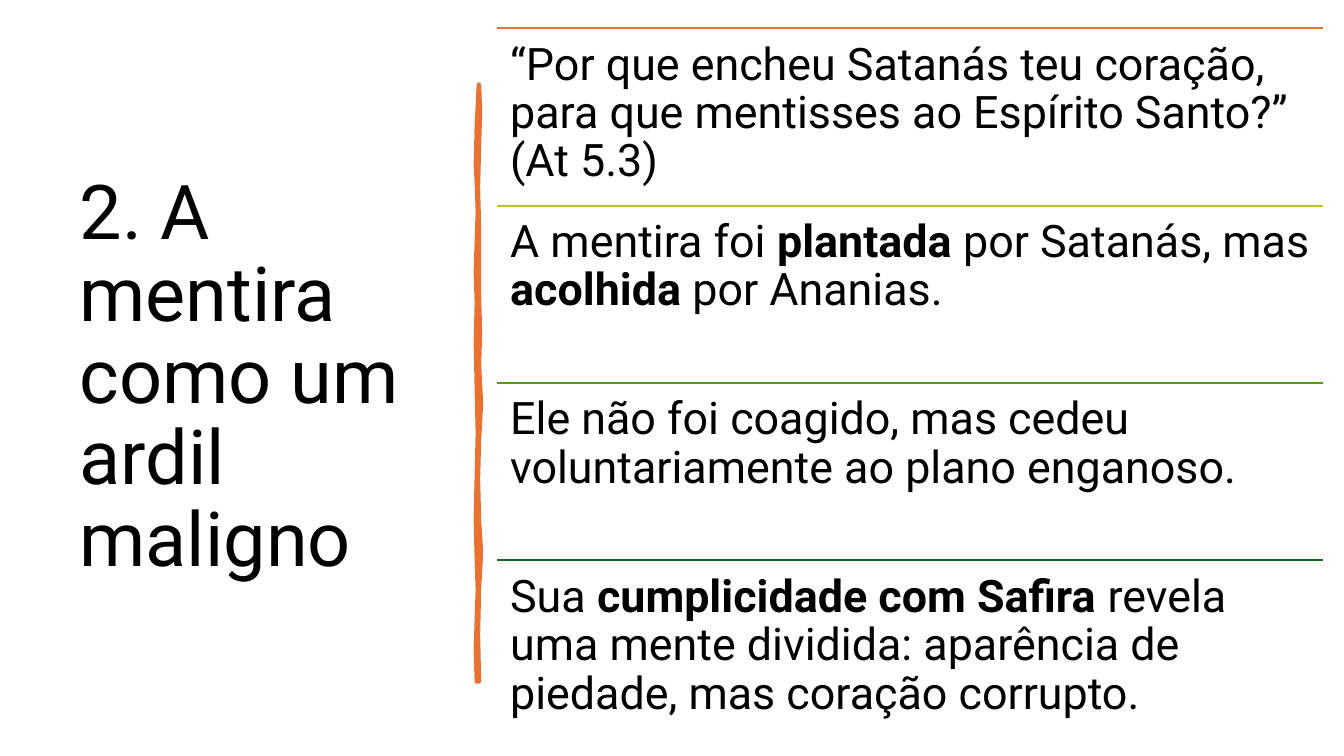
import pptx
import pptx.util
import pptx.dml.color
import pptx.enum.text
import pptx.enum.shapes
import lxml.etree

# Content: in each point, every second piece is bold
HEADING = "2. A mentira como um ardil maligno"
POINTS = [
    ("E97132", ["“Por que encheu Satanás teu coração, para que mentisses ao "
                "Espírito Santo?” (At 5.3)"]),
    ("CBC11E", ["A mentira foi ", "plantada", " por Satanás, mas ", "acolhida",
                " por Ananias."]),
    ("56991D", ["Ele não foi coagido, mas cedeu voluntariamente ao plano enganoso."]),
    ("196B24", ["Sua ", "cumplicidade com Safira", " revela uma mente dividida: "
                "aparência de piedade, mas coração corrupto."]),
]
# Brush stroke edges in hundredths of an inch: (x, y), down the right, up the left
STROKE = [(475, 84), (476, 110), (475, 146), (474, 185), (475, 226), (475, 294),
          (476, 330), (475, 362), (477, 400), (475, 436), (474, 475), (475, 516),
          (477, 548), (475, 584), (474, 630), (475, 676),
          (473, 676), (472, 645), (473, 613), (474, 585), (473, 557), (472, 515),
          (473, 471), (474, 430), (473, 386), (472, 340), (473, 300), (472, 270),
          (473, 238), (474, 210), (473, 181), (472, 164), (473, 125)]
STROKE_COLOR = "E97132"

# Layout in inches
POINTS_LEFT, POINTS_TOP = 4.93, 0.28
POINT_WIDTH, POINT_HEIGHT = 8.19, 1.76
POINT_INSET = 0.13

inch = pptx.util.Inches


def rgb(code):
    return pptx.dml.color.RGBColor.from_string(code)


def write(frame, pieces, size, anchor, inset=None):
    frame.word_wrap = True
    frame.auto_size = pptx.enum.text.MSO_AUTO_SIZE.NONE
    frame.vertical_anchor = anchor
    if inset is not None:
        frame.margin_left = frame.margin_right = inch(inset)
        frame.margin_top = frame.margin_bottom = inch(inset)
    paragraph = frame.paragraphs[0]
    paragraph.alignment = pptx.enum.text.PP_ALIGN.LEFT
    paragraph.line_spacing = 0.9
    for index, piece in enumerate(pieces):
        run = paragraph.add_run()
        run.text = piece
        run.font.name = "Roboto"
        run.font.size = pptx.util.Pt(size)
        run.font.bold = index % 2 == 1
        run.font.color.rgb = rgb("000000")


def add_rule(slide, left, top, width, color):
    rule = slide.shapes.add_connector(
        pptx.enum.shapes.MSO_CONNECTOR.STRAIGHT,
        inch(left), inch(top), inch(left + width), inch(top))
    rule.line.color.rgb = rgb(color)
    rule.line.width = pptx.util.Pt(1.5)
    lxml.etree.SubElement(rule._element.spPr, pptx.oxml.ns.qn("a:effectLst"))


def add_stroke(slide):
    outline = slide.shapes.build_freeform(*STROKE[0], scale=inch(0.01))
    outline.add_line_segments(STROKE[1:], close=True)
    stroke = outline.convert_to_shape()
    stroke.shadow.inherit = False
    stroke.fill.solid()
    stroke.fill.fore_color.rgb = rgb(STROKE_COLOR)
    stroke.line.color.rgb = rgb(STROKE_COLOR)
    stroke.line.width = pptx.util.Pt(3.25)


def main():
    deck = pptx.Presentation()
    deck.slide_width, deck.slide_height = inch(13.33), inch(7.5)
    slide = deck.slides.add_slide(deck.slide_layouts.get_by_name("Title Only"))

    # Heading and brush stroke
    heading = slide.shapes.title
    heading.left, heading.top = inch(0.69), inch(0.7)
    heading.width, heading.height = inch(3.74), inch(6.11)
    write(heading.text_frame, [HEADING], 54, pptx.enum.text.MSO_ANCHOR.MIDDLE)
    add_stroke(slide)

    # Points, each under its coloured rule
    for row, (color, pieces) in enumerate(POINTS):
        top = POINTS_TOP + row * POINT_HEIGHT
        add_rule(slide, POINTS_LEFT, top, POINT_WIDTH, color)
        point = slide.shapes.add_textbox(
            inch(POINTS_LEFT), inch(top), inch(POINT_WIDTH), inch(POINT_HEIGHT))
        write(point.text_frame, pieces, 32, pptx.enum.text.MSO_ANCHOR.TOP, POINT_INSET)

    deck.save("out.pptx")


if __name__ == "__main__":
    main()
